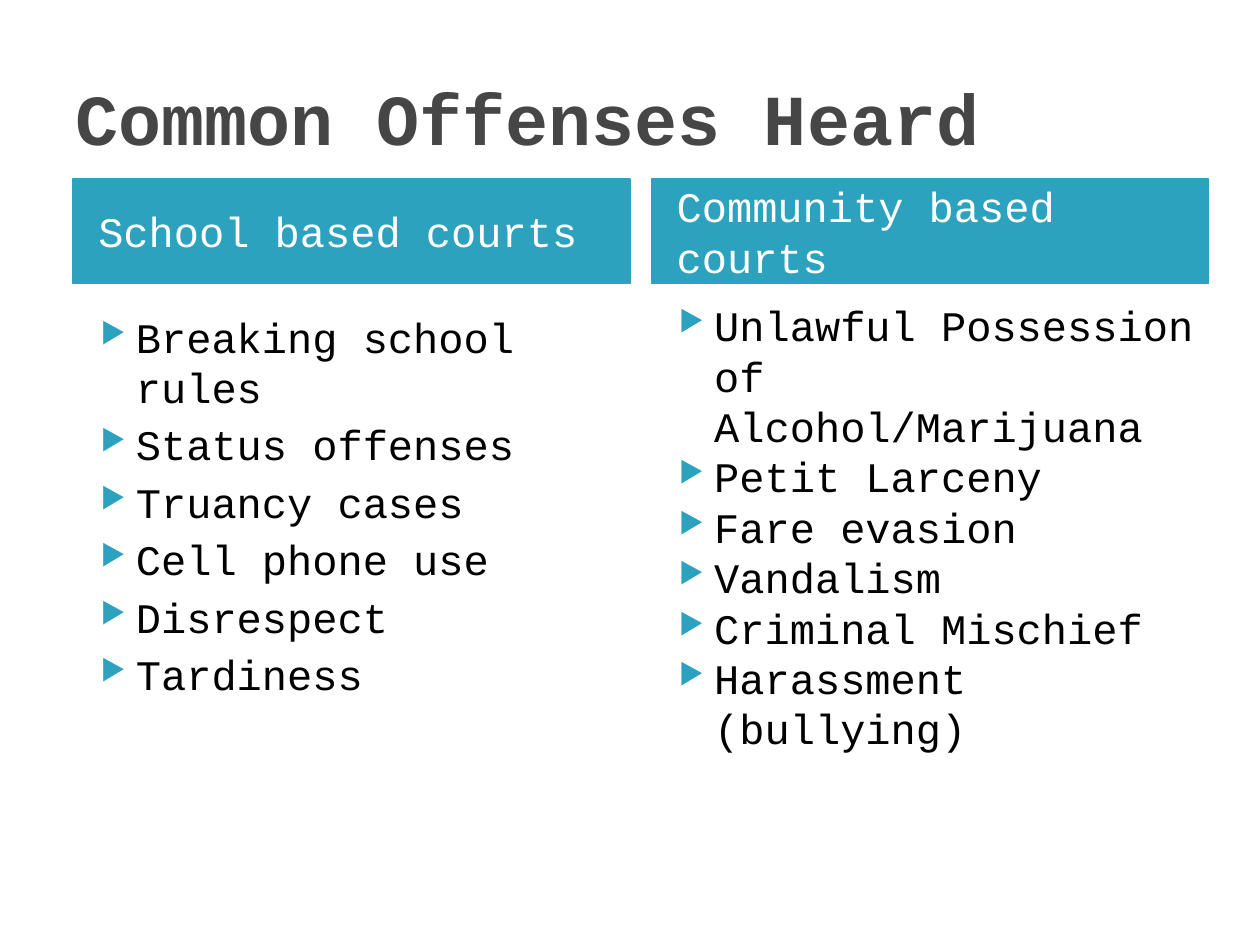
import pptx
import pptx.dml.color
import pptx.enum.shapes
import pptx.enum.text
import pptx.util
from lxml import etree

Inches = pptx.util.Inches
Pt = pptx.util.Pt

COLORS = {"title": "464646", "accent": "2DA2BF", "header": "FFFFFF", "body": "000000"}
FONT = "Courier New"

COLUMN_LEFT, COLUMN_WIDTH, COLUMN_STEP = 0.58, 4.42, 4.59
HEADER_TOP, HEADER_HEIGHT = 1.42, 0.83
LIST_HEIGHT = 4.31

# heading, top of the list, space before each later item, items
columns = [
    ("School based courts", 2.42, 4,
     ["Breaking school rules", "Status offenses", "Truancy cases",
      "Cell phone use", "Disrespect", "Tardiness"]),
    ("Community based courts", 2.33, 0,
     ["Unlawful Possession of Alcohol/Marijuana", "Petit Larceny", "Fare evasion",
      "Vandalism", "Criminal Mischief", "Harassment (bullying)"]),
]


def style(paragraph, size, color, bold=False):
    paragraph.alignment = pptx.enum.text.PP_ALIGN.LEFT
    paragraph.font.name = FONT
    paragraph.font.size = Pt(size)
    paragraph.font.bold = bold
    paragraph.font.color.rgb = pptx.dml.color.RGBColor.from_string(COLORS[color])


def add_bullet(paragraph):
    properties = paragraph._p.get_or_add_pPr()
    properties.set("marL", str(Inches(0.4)))
    properties.set("indent", str(Inches(-0.28)))
    namespace = pptx.oxml.ns.qn("a:buChar").removesuffix("buChar")
    bullet_color = etree.SubElement(properties, namespace + "buClr")
    etree.SubElement(bullet_color, namespace + "srgbClr", val=COLORS["accent"])
    etree.SubElement(properties, namespace + "buSzPct", val="68000")
    etree.SubElement(properties, namespace + "buChar", char="▶")


presentation = pptx.Presentation()
presentation.slide_width = Inches(10)
presentation.slide_height = Inches(7.5)
slide = presentation.slides.add_slide(presentation.slide_layouts[6])

title = slide.shapes.add_textbox(Inches(0.5), Inches(0.3), Inches(9), Inches(1.25))
title.text_frame.word_wrap = True
title.text_frame.vertical_anchor = pptx.enum.text.MSO_ANCHOR.MIDDLE
title.text_frame.text = "Common Offenses Heard"
style(title.text_frame.paragraphs[0], 41, "title", bold=True)

accent = pptx.dml.color.RGBColor.from_string(COLORS["accent"])
for index, (heading, list_top, spacing, items) in enumerate(columns):
    left = Inches(COLUMN_LEFT + index * COLUMN_STEP)
    width = Inches(COLUMN_WIDTH)

    header = slide.shapes.add_shape(
        pptx.enum.shapes.MSO_SHAPE.RECTANGLE,
        left, Inches(HEADER_TOP), width, Inches(HEADER_HEIGHT))
    header.shadow.inherit = False
    header.fill.solid()
    header.fill.fore_color.rgb = accent
    header.line.color.rgb = accent
    header.line.width = Pt(0.75)
    header.text_frame.word_wrap = True
    header.text_frame.margin_left = Inches(0.2)
    header.text_frame.vertical_anchor = pptx.enum.text.MSO_ANCHOR.MIDDLE
    header.text_frame.text = heading
    style(header.text_frame.paragraphs[0], 24, "header")

    offenses = slide.shapes.add_textbox(left, Inches(list_top), width, Inches(LIST_HEIGHT))
    offenses.text_frame.word_wrap = True
    offenses.text_frame.text = "\n".join(items)
    for position, paragraph in enumerate(offenses.text_frame.paragraphs):
        add_bullet(paragraph)
        paragraph.space_before = Pt(spacing if position else 0)
        style(paragraph, 24, "body")

presentation.save("out.pptx")
